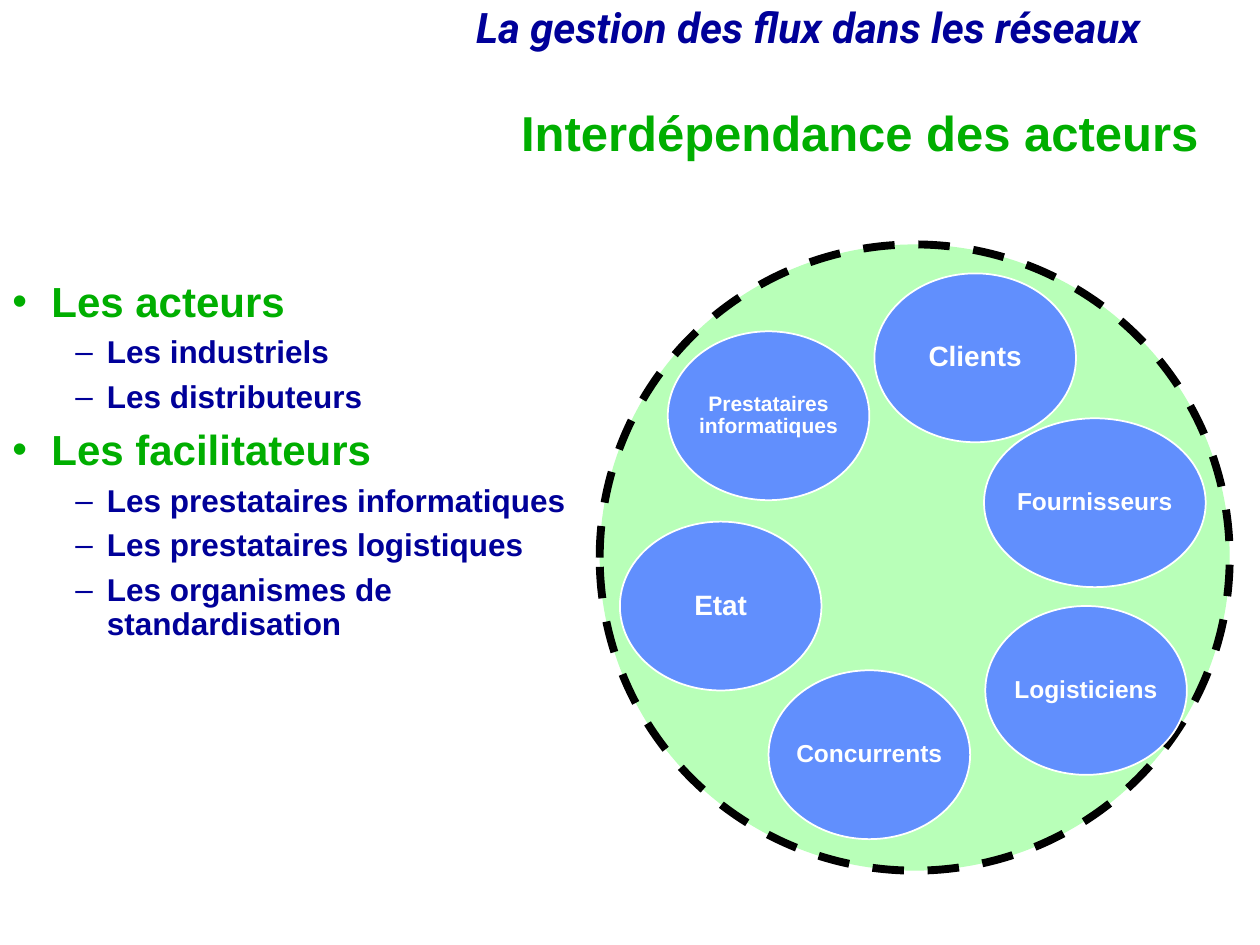
from dataclasses import dataclass

from lxml import etree
from pptx import Presentation
from pptx import util as u
from pptx.dml.color import RGBColor
from pptx.enum import dml, shapes, text
from pptx.oxml import ns

GREEN = RGBColor(0x00, 0xAE, 0x00)
NAVY = RGBColor(0x00, 0x00, 0x99)
PALE_GREEN = RGBColor(0xB8, 0xFF, 0xB8)
BLUE = RGBColor(0x61, 0x8F, 0xFD)
WHITE = RGBColor(0xFF, 0xFF, 0xFF)
BLACK = RGBColor(0x00, 0x00, 0x00)


@dataclass(frozen=True)
class Actor:
    label: str
    left: float
    top: float
    size: int
    width: float = 1.6
    height: float = 1.34


@dataclass(frozen=True)
class Level:
    size: int
    color: RGBColor
    bullet: str
    margin: float
    hanging: float
    before: int


ACTORS = [
    Actor("Clients", 6.94, 2.17, 16),
    Actor("Fournisseurs", 7.81, 3.32, 14, width=1.76),
    Actor("Logisticiens", 7.82, 4.81, 14),
    Actor("Concurrents", 6.1, 5.32, 14),
    Actor("Etat", 4.92, 4.14, 16),
    Actor("Prestataires informatiques", 5.3, 2.63, 12),
]
GROUP = Level(24, GREEN, "•", 0.31, 0.31, 8)
MEMBER = Level(18, NAVY, "–", 0.75, 0.25, 6)
OUTLINE = {
    "Les acteurs": ["Les industriels", "Les distributeurs"],
    "Les facilitateurs": [
        "Les prestataires informatiques",
        "Les prestataires logistiques",
        "Les organismes de \vstandardisation",
    ],
}


def write(p, words: str, size: int, color: RGBColor, **formats) -> None:
    p.text = words
    p.line_spacing = 0.9
    values = {"name": "Arial", "size": u.Pt(size), "bold": True, **formats}
    for r in p.runs:
        for name, value in values.items():
            setattr(r.font, name, value)
        r.font.color.rgb = color


def add_box(s, left: float, top: float, width: float, height: float):
    box = s.shapes.add_textbox(*map(u.Inches, (left, top, width, height)))
    box.text_frame.word_wrap = True
    return box.text_frame


def add_ellipse(s, left: float, top: float, width: float, height: float,
                fill: RGBColor, line: RGBColor, weight: float):
    sp = s.shapes.add_shape(shapes.MSO_SHAPE.OVAL,
                            *map(u.Inches, (left, top, width, height)))
    sp.shadow.inherit = False
    sp.fill.solid()
    sp.fill.fore_color.rgb = fill
    sp.line.color.rgb = line
    sp.line.width = u.Pt(weight)
    return sp


def add_actor(s, a: Actor) -> None:
    sp = add_ellipse(s, a.left, a.top, a.width, a.height, BLUE, WHITE, 1)
    tf = sp.text_frame
    formats = {"margin_left": 0, "margin_right": 0, "margin_top": 0, "margin_bottom": 0,
               "word_wrap": " " in a.label, "vertical_anchor": text.MSO_ANCHOR.MIDDLE}
    for name, value in formats.items():
        setattr(tf, name, value)
    p = tf.paragraphs[0]
    p.alignment = text.PP_ALIGN.CENTER
    write(p, a.label, a.size, WHITE)


def add_item(tf, words: str, level: Level) -> None:
    p = tf.add_paragraph() if tf.text else tf.paragraphs[0]
    p.space_before = u.Pt(level.before if len(tf.paragraphs) > 1 else 0)
    p.level = 0 if level is GROUP else 1
    write(p, words, level.size, level.color)
    pPr = p._p.get_or_add_pPr()
    pPr.set("marL", str(u.Inches(level.margin)))
    pPr.set("indent", str(-u.Inches(level.hanging)))
    etree.SubElement(pPr, ns.qn("a:buFont")).set("typeface", "Arial")
    etree.SubElement(pPr, ns.qn("a:buChar")).set("char", level.bullet)


def add_title(s, words: str) -> None:
    title = s.shapes.title
    bounds = {"left": 1.69, "top": 0.83, "width": 7.92, "height": 0.5}
    for name, value in bounds.items():
        setattr(title, name, u.Inches(value))
    tf = title.text_frame
    tf.auto_size = text.MSO_AUTO_SIZE.NONE
    tf.vertical_anchor = text.MSO_ANCHOR.MIDDLE
    p = tf.paragraphs[0]
    p.alignment = text.PP_ALIGN.RIGHT
    write(p, words, 28, GREEN)


def main() -> None:
    prs = Presentation()
    prs.slide_width, prs.slide_height = u.Inches(10), u.Inches(7.5)
    s = prs.slides.add_slide(prs.slide_layouts[5])

    header = add_box(s, 3.68, 0.01, 6.34, 0.46)
    write(header.paragraphs[0], "La gestion des flux dans les réseaux", 24, NAVY,
          name="Roboto", italic=True)
    add_title(s, "Interdépendance des acteurs")

    network = add_ellipse(s, 4.76, 1.94, 5, 4.97, PALE_GREEN, BLACK, 4.5)
    network.line.dash_style = dml.MSO_LINE.DASH
    for actor in ACTORS:
        add_actor(s, actor)

    body = add_box(s, 0, 2.18, 5.34, 4.5)
    for group, members in OUTLINE.items():
        add_item(body, group, GROUP)
        for member in members:
            add_item(body, member, MEMBER)

    prs.save("out.pptx")


if __name__ == "__main__":
    main()
